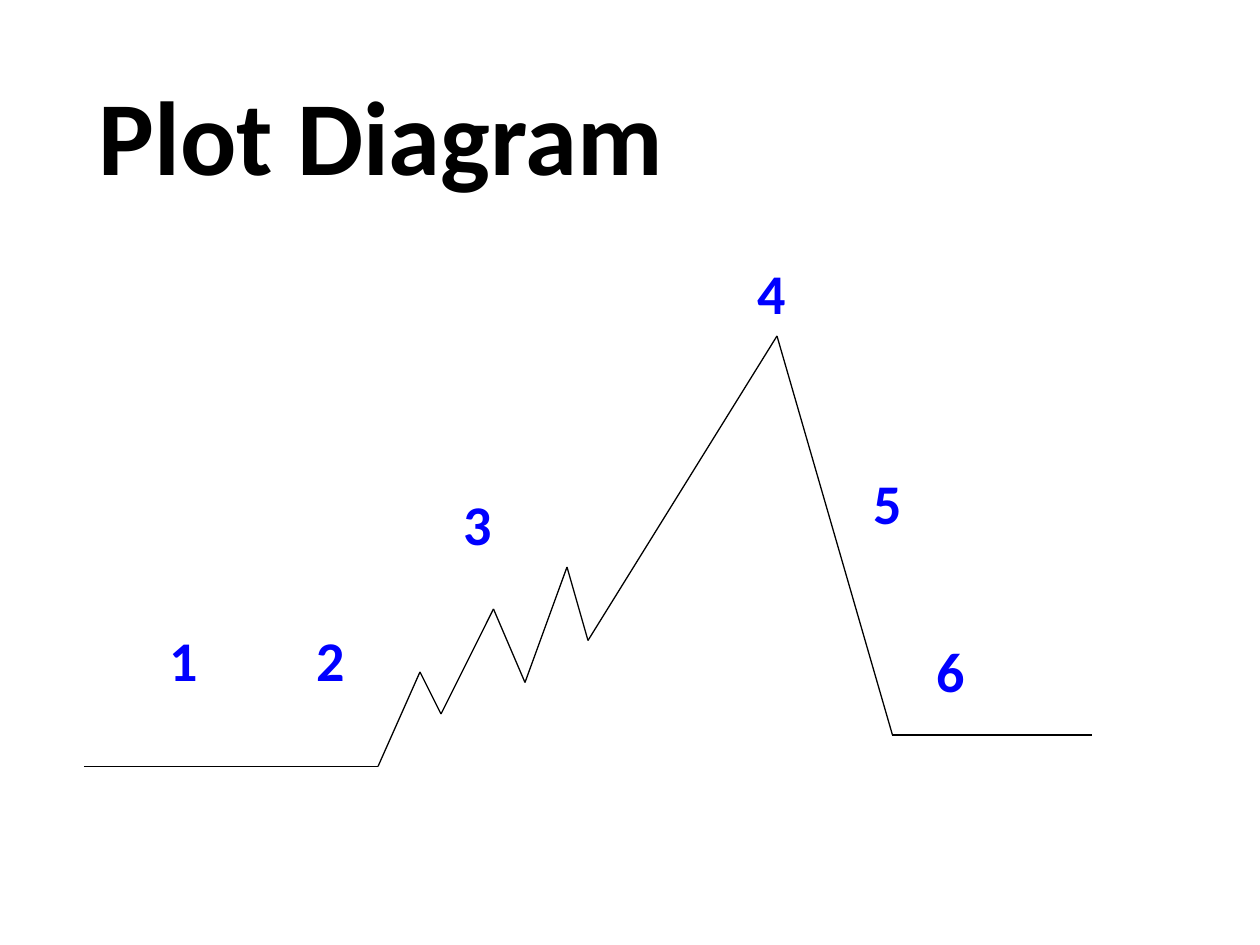
from itertools import pairwise
from pptx import Presentation
from pptx.dml.color import RGBColor
from pptx.enum.shapes import MSO_CONNECTOR
from pptx.enum.text import MSO_ANCHOR
from pptx.oxml.ns import qn
from pptx.util import Inches, Pt
from lxml.etree import SubElement

COLORS = {"ink": "000000", "label": "0000FF"}
CELL = Inches(1) // 12
COLS, ROWS = 120, 90

CURVE = [(0, 49), (28, 49), (32, 40), (34, 44), (39, 34), (42, 41),
         (46, 30), (48, 37), (66, 8), (77, 46), (96, 46)]
LABELS = [("1", 7, 35, 7), ("2", 21, 35, 8), ("3", 35, 22, 6),
          ("4", 63, 0, 6), ("5", 74, 20, 7), ("6", 80, 36, 7)]


def grid(*cells):
    return [round(cell * CELL) for cell in cells]


def write(slide, text, box, size=32, color="label", anchor=MSO_ANCHOR.TOP, lead=1.0):
    frame = slide.shapes.add_textbox(*grid(*box)).text_frame
    frame.word_wrap = True
    frame.vertical_anchor = anchor
    para = frame.paragraphs[0]
    para.line_spacing = lead
    run = para.add_run()
    run.text = text
    run.font.name = "Calibri"
    run.font.size = Pt(size)
    run.font.bold = True
    run.font.color.rgb = RGBColor.from_string(COLORS[color])


def stroke(slide, start, end):
    line = slide.shapes.add_connector(MSO_CONNECTOR.STRAIGHT, *grid(*start, *end))
    line.line.color.rgb = RGBColor.from_string(COLORS["ink"])
    line.line.width = Pt(0.75)
    SubElement(line._element.spPr, qn("a:effectLst"))


def title(slide, box):
    write(slide, "Plot Diagram", box, size=60, color="ink",
          anchor=MSO_ANCHOR.MIDDLE, lead=0.9)


def plot(slide, left, top):
    points = [(left + x, top + y) for x, y in CURVE]
    for start, end in pairwise(points):
        stroke(slide, start, end)
    for text, x, y, width in LABELS:
        write(slide, text, (left + x, top + y, width, 7.5))


def main():
    deck = Presentation()
    deck.slide_width, deck.slide_height = grid(COLS, ROWS)
    slide = deck.slides.add_slide(deck.slide_layouts[6])
    title(slide, (8.25, 4.8, 103.5, 17.4))
    plot(slide, 8, 24)
    deck.save("out.pptx")


if __name__ == "__main__":
    main()
